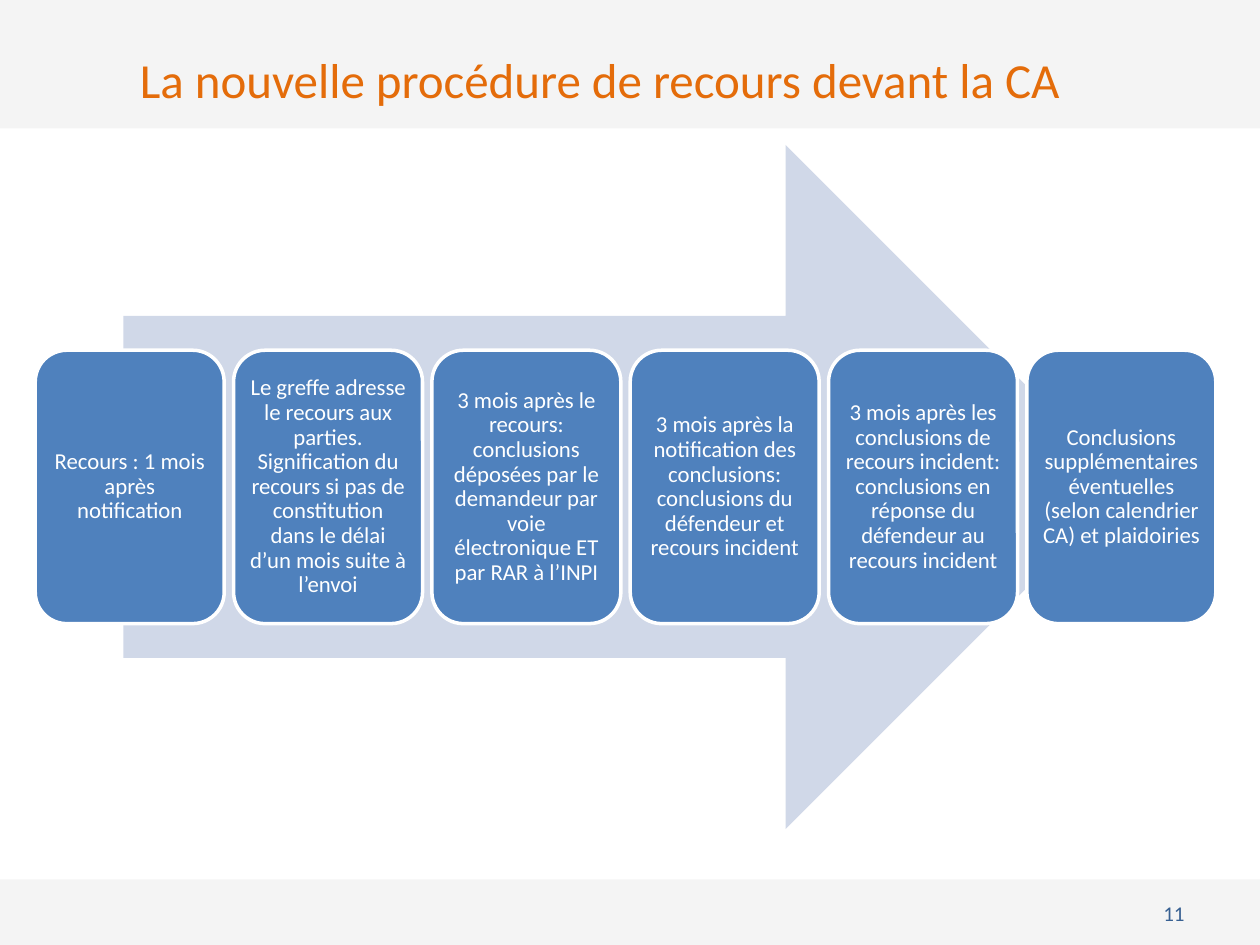
import pptx
import pptx.dml.color
import pptx.enum.shapes
import pptx.enum.text
import pptx.util
from lxml import etree
from pptx.oxml.ns import qn

Inches = pptx.util.Inches
SHAPE = pptx.enum.shapes.MSO_SHAPE
ALIGN = pptx.enum.text.PP_ALIGN

STEPS = [
    "Recours : 1 mois après notification",
    "Le greffe adresse le recours aux parties. Signification du recours si pas de "
    "constitution dans le délai d’un mois suite à l’envoi",
    "3 mois après le recours: conclusions déposées par le demandeur par voie "
    "électronique ET par RAR à l’INPI",
    "3 mois après la notification des conclusions: conclusions du défendeur et "
    "recours incident",
    "3 mois après les conclusions de recours incident: conclusions en réponse du "
    "défendeur au recours incident",
    "Conclusions supplémentaires éventuelles (selon calendrier CA) et plaidoiries",
]
STEP_LEFT, STEP_RIGHT, STEP_WIDTH = 0.28, 9.65, 1.5
STEP_PITCH = (STEP_RIGHT - STEP_LEFT - STEP_WIDTH) / (len(STEPS) - 1)


def rgb(value):
    return pptx.dml.color.RGBColor.from_string(value)


def set_all(target, values):
    for name, value in values.items():
        setattr(target, name, value)


class Deck:
    """Holds the style and the current slide."""

    font = "Calibri"
    band, arrow, box = "EAEAEA", "D0D8E8", "4F81BD"
    title, number, light = "E46C0A", "376092", "FFFFFF"

    def __init__(self, slide):
        self.s = slide

    def shape(self, kind, at, fill, line=None, alpha=None):
        """Add a filled preset shape; alpha is the opacity in percent."""
        sp = self.s.shapes.add_shape(kind, *map(Inches, at))
        sp.shadow.inherit = False
        sp.fill.solid()
        sp.fill.fore_color.rgb = rgb(fill)
        if alpha is not None:
            color = sp.element.spPr.find(f"{qn('a:solidFill')}/{qn('a:srgbClr')}")
            etree.SubElement(color, qn("a:alpha"), val=str(alpha * 1000))
        if line:
            sp.line.color.rgb = rgb(line)
            sp.line.width = pptx.util.Pt(2)
        else:
            sp.line.fill.background()
        return sp

    def add_text(self, sp, text, size, color, align=ALIGN.CENTER, frame=None, para=None):
        """Put one styled paragraph into a shape."""
        tf = sp.text_frame
        set_all(tf, {"word_wrap": True,
                     "vertical_anchor": pptx.enum.text.MSO_ANCHOR.MIDDLE,
                     **(frame or {})})
        p = tf.paragraphs[0]
        set_all(p, {"alignment": align, **(para or {})})
        r = p.add_run()
        r.text = text
        set_all(r.font, {"name": self.font, "size": pptx.util.Pt(size)})
        r.font.color.rgb = rgb(color)

    def label(self, at, text, size, color, align=ALIGN.CENTER):
        sp = self.s.shapes.add_textbox(*map(Inches, at))
        self.add_text(sp, text, size, color, align)

    def step(self, left, text):
        sp = self.shape(SHAPE.ROUNDED_RECTANGLE, (left, 2.78, STEP_WIDTH, 2.17),
                        self.box, line=self.light)
        inset = Inches(0.05)
        margins = {f"margin_{side}": inset for side in ("left", "top", "right", "bottom")}
        self.add_text(sp, text, 13, self.light, frame=margins, para={"line_spacing": 0.9})


def main():
    prs = pptx.Presentation()
    set_all(prs, {"slide_width": Inches(10), "slide_height": Inches(7.5)})
    deck = Deck(prs.slides.add_slide(prs.slide_layouts[6]))

    for band in ((0, 6.98, 10.04, 0.55), (0, -0.03, 10, 1.05)):
        deck.shape(SHAPE.RECTANGLE, band, deck.band, alpha=50)
    deck.label((0.5, 0.45, 8.52, 0.35),
               "La nouvelle procédure de recours devant la CA", 28, deck.title)
    deck.label((7.17, 7.05, 2.33, 0.4), "11", 12, deck.number, ALIGN.RIGHT)

    deck.shape(SHAPE.RIGHT_ARROW, (0.98, 1.15, 7.97, 5.43), deck.arrow)
    for i, text in enumerate(STEPS):
        deck.step(STEP_LEFT + i * STEP_PITCH, text)

    prs.save("out.pptx")


if __name__ == "__main__":
    main()
